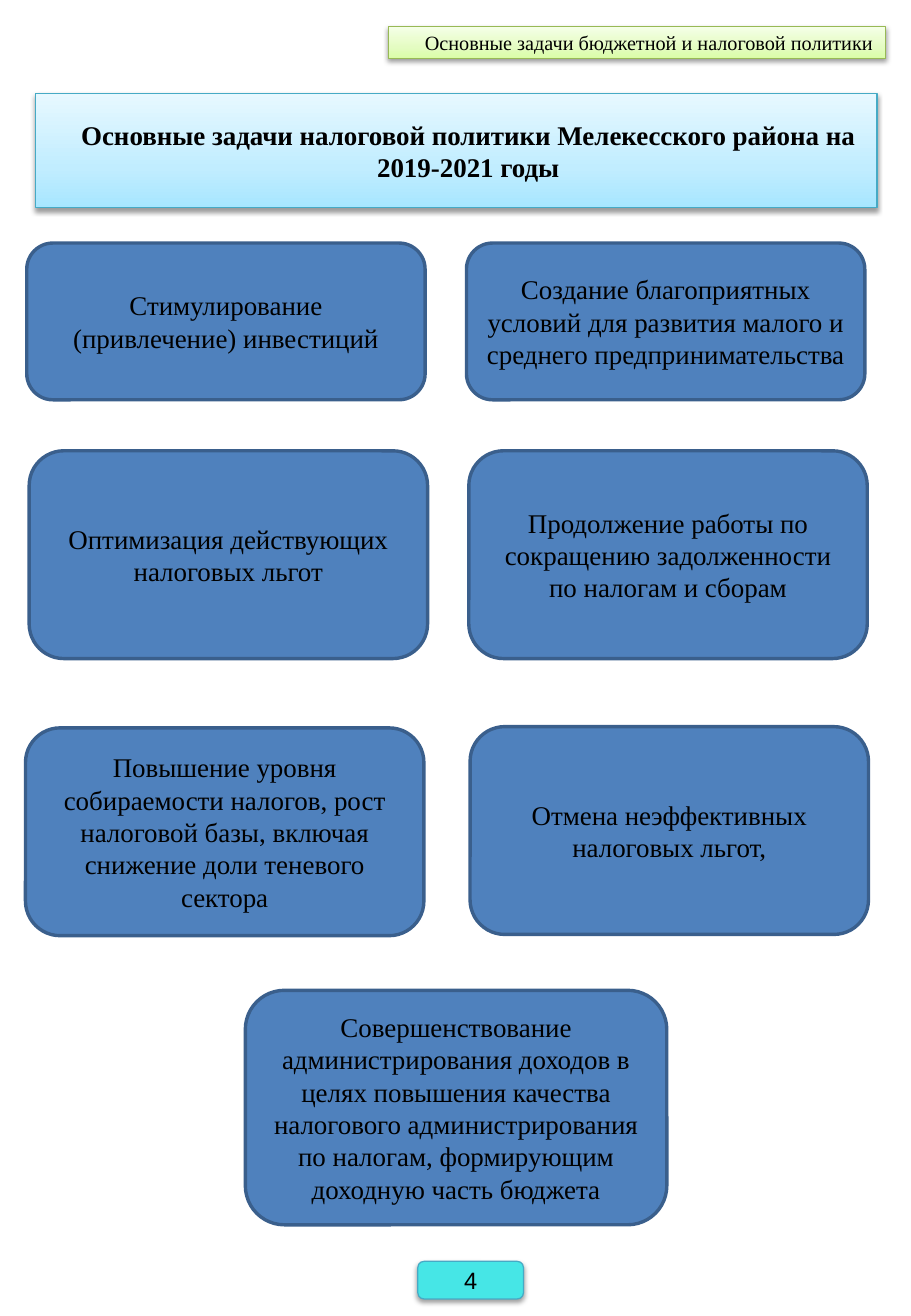
from dataclasses import dataclass

from lxml import etree
from pptx import Presentation
from pptx.dml.color import RGBColor
from pptx.enum.shapes import MSO_SHAPE
from pptx.enum.text import MSO_ANCHOR, PP_ALIGN
from pptx.oxml.ns import qn
from pptx.util import Inches, Pt

ROUNDED = MSO_SHAPE.ROUNDED_RECTANGLE
RECTANGLE = MSO_SHAPE.RECTANGLE
BADGE = MSO_SHAPE.FLOWCHART_ALTERNATE_PROCESS
CENTER, RIGHT = PP_ALIGN.CENTER, PP_ALIGN.RIGHT
MIDDLE = MSO_ANCHOR.MIDDLE

WIDTH, HEIGHT = Inches(7.5), Inches(10.83)
COLUMNS, ROWS = 750, 1083
CARD_COLUMNS = 328
SERIF, SANS = "Times New Roman", "Arial"
BLACK = "000000"
STOPS = (0, 35, 100)


@dataclass(frozen=True)
class Panel:
    text: str
    column: int
    row: int
    columns: int
    rows: int
    kind: int = ROUNDED
    fills: tuple[str, ...] = ("4F81BD",)
    line: str = "3A5F8C"
    line_width: float = 2
    size: int = 16
    font: str = SERIF
    bold: bool = False
    align: int = CENTER
    margin: float = 0
    shadow: bool = False


PANELS = (
    Panel("Стимулирование (привлечение) инвестиций", 22, 200, CARD_COLUMNS, 129),
    Panel("Создание благоприятных условий для развития малого и среднего "
          "предпринимательства", 384, 200, CARD_COLUMNS, 129),
    Panel("Оптимизация действующих налоговых льгот", 24, 371, CARD_COLUMNS, 171),
    Panel("Продолжение работы по сокращению задолженности по налогам и сборам",
          386, 371, CARD_COLUMNS, 171),
    Panel("Повышение уровня собираемости налогов, рост налоговой базы, включая "
          "снижение доли теневого сектора", 21, 599, CARD_COLUMNS, 171),
    Panel("Отмена неэффективных налоговых льгот,", 387, 598, CARD_COLUMNS, 171),
    Panel("Совершенствование администрирования доходов в целях повышения качества "
          "налогового администрирования по налогам, формирующим доходную часть "
          "бюджета", 202, 815, 347, 193),
    Panel("Основные задачи налоговой политики Мелекесского района на 2019-2021 годы",
          29, 77, 693, 94, RECTANGLE, ("A7E6FF", "C1EDFF", "E7F8FF"), "46AAC5", 0.75,
          bold=True, margin=0.2, shadow=True),
    Panel("Основные задачи бюджетной и налоговой политики",
          320, 22, 409, 26, RECTANGLE, ("DAFDA7", "E4FCC2", "F5FFE7"), "98B955", 0.75,
          size=12, align=RIGHT, margin=0.04, shadow=True),
    Panel("4", 344, 1038, 87, 31, BADGE, ("46E6E6",), "46AAC5", 0.75,
          size=14, font=SANS, shadow=True),
)


def rgb(value: str) -> RGBColor:
    return RGBColor.from_string(value)


def x(columns: int) -> int:
    return round(WIDTH * columns / COLUMNS)


def y(rows: int) -> int:
    return round(HEIGHT * rows / ROWS)


def add_color(parent, value: str):
    return etree.SubElement(parent, qn("a:srgbClr"), val=value)


def paint(s, colors: tuple[str, ...]) -> None:
    if len(colors) == 1:
        s.fill.solid()
        s.fill.fore_color.rgb = rgb(colors[0])
        return
    s.fill.gradient()
    s.fill.gradient_angle = 90
    stops = s._element.spPr.find(".//" + qn("a:gsLst"))
    for stop in list(stops):
        stops.remove(stop)
    for position, color in zip(STOPS, colors):
        add_color(etree.SubElement(stops, qn("a:gs"), pos=str(position * 1000)), color)


def add_shadow(s) -> None:
    effects = s._element.spPr.find(qn("a:effectLst"))
    outer = etree.SubElement(effects, qn("a:outerShdw"), blurRad=str(Pt(3.1)),
                             dist=str(Pt(1.6)), dir="5400000", rotWithShape="0")
    etree.SubElement(add_color(outer, BLACK), qn("a:alpha"), val="38000")


def write(s, panel: Panel) -> None:
    tf = s.text_frame
    tf.word_wrap = True
    tf.vertical_anchor = MIDDLE
    tf.text = panel.text
    p = tf.paragraphs[0]
    p.alignment = panel.align
    if panel.margin:
        p._p.get_or_add_pPr().set("marL", str(Inches(panel.margin)))
    font = p.runs[0].font
    font.name, font.size, font.bold = panel.font, Pt(panel.size), panel.bold
    font.color.rgb = rgb(BLACK)


def add_panel(slide, panel: Panel) -> None:
    s = slide.shapes.add_shape(panel.kind, x(panel.column), y(panel.row),
                               x(panel.columns), y(panel.rows))
    s.shadow.inherit = False
    paint(s, panel.fills)
    s.line.color.rgb = rgb(panel.line)
    s.line.width = Pt(panel.line_width)
    if panel.shadow:
        add_shadow(s)
    write(s, panel)


def main() -> None:
    prs = Presentation()
    prs.slide_width, prs.slide_height = WIDTH, HEIGHT
    slide = prs.slides.add_slide(prs.slide_layouts[6])
    for panel in PANELS:
        add_panel(slide, panel)
    prs.save("out.pptx")


if __name__ == "__main__":
    main()
